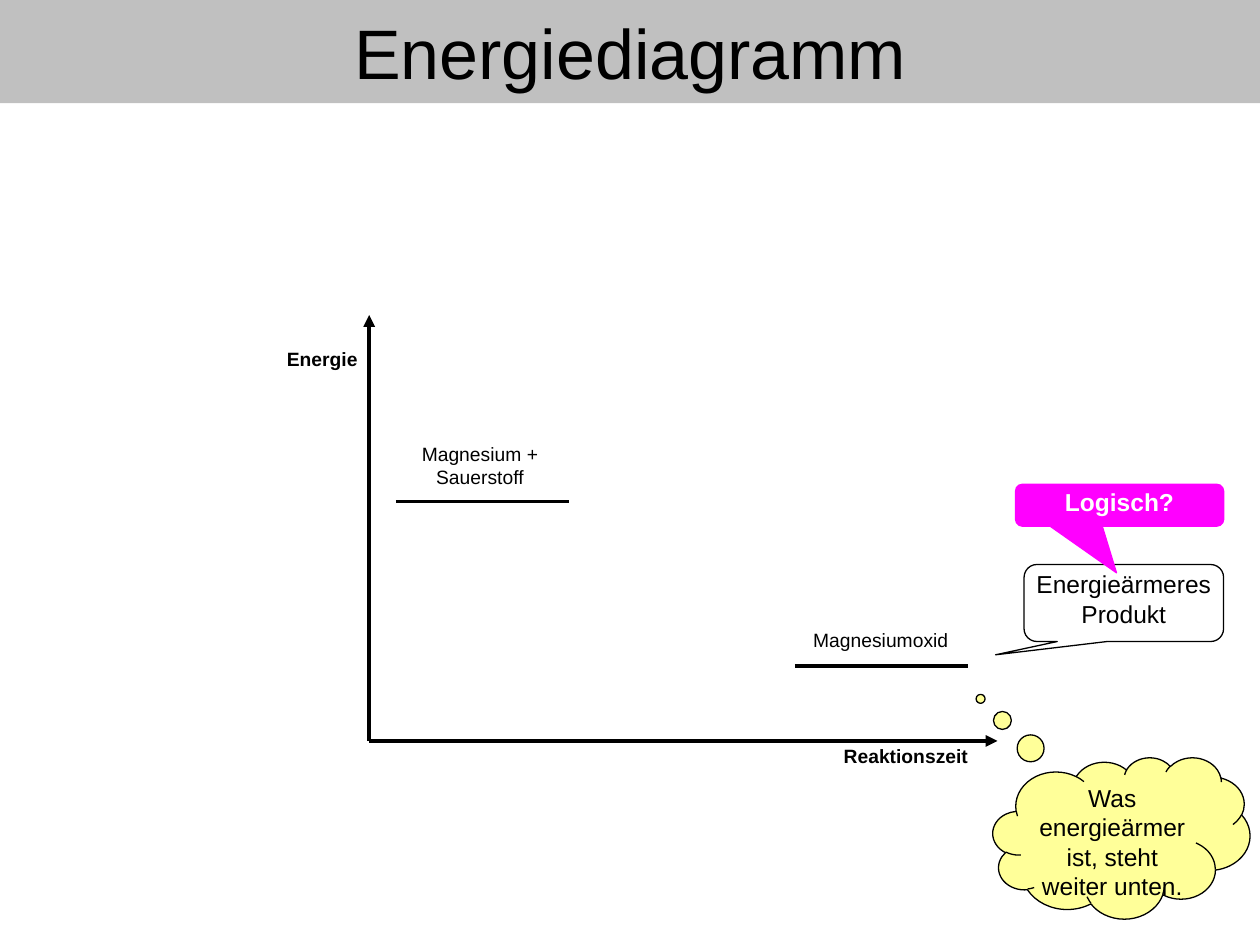
from dataclasses import dataclass

from lxml import etree
from pptx import Presentation
from pptx.dml.color import RGBColor
from pptx.enum import shapes, text
from pptx.oxml import ns
from pptx.util import Pt


@dataclass(frozen=True)
class Theme:
    font: str = "Arial"
    ink: str = "000000"
    paper: str = "FFFFFF"
    banner: str = "C0C0C0"
    thought: str = "FFFF99"
    question: str = "FF00FF"
    title_size: float = 40
    callout_size: float = 14
    label_size: float = 11
    heavy: float = 2.25
    thin: float = 0.75


class Diagram:
    def __init__(self, page, theme):
        self.page = page
        self.theme = theme

    def set_words(self, frame, words, size, color, bold=False, align=text.PP_ALIGN.CENTER):
        frame.text = words
        frame.word_wrap = True
        for para in frame.paragraphs:
            para.alignment = align
            for span in para.runs:
                span.font.name = self.theme.font
                span.font.size = Pt(size)
                span.font.bold = bold
                span.font.color.rgb = RGBColor.from_string(color)

    def paint(self, box, color):
        box.fill.solid()
        box.fill.fore_color.rgb = RGBColor.from_string(color)

    def title(self, words, width, height):
        box = self.page.shapes.title
        box.left, box.top, box.width, box.height = 0, 0, Pt(width), Pt(height)
        self.paint(box, self.theme.banner)
        self.set_words(box.text_frame, words, self.theme.title_size, self.theme.ink)
        box.text_frame.auto_size = text.MSO_AUTO_SIZE.NONE
        box.text_frame.vertical_anchor = text.MSO_ANCHOR.MIDDLE

    def line(self, start, end, arrow=False):
        points = [Pt(value) for value in (*start, *end)]
        rule = self.page.shapes.add_connector(shapes.MSO_CONNECTOR.STRAIGHT, *points)
        rule.line.color.rgb = RGBColor.from_string(self.theme.ink)
        rule.line.width = Pt(self.theme.heavy)
        properties = rule._element.spPr
        if arrow:
            outline = properties.find(ns.qn("a:ln"))
            etree.SubElement(outline, ns.qn("a:tailEnd"), type="triangle")
        etree.SubElement(properties, ns.qn("a:effectLst"))

    def label(self, words, area, bold=False, align=text.PP_ALIGN.CENTER):
        box = self.page.shapes.add_textbox(*map(Pt, area))
        self.set_words(box.text_frame, words, self.theme.label_size, self.theme.ink, bold, align)
        box.text_frame.auto_size = text.MSO_AUTO_SIZE.SHAPE_TO_FIT_TEXT

    def callout(self, kind, words, area, tip, fill, edge, color, bold=False):
        box = self.page.shapes.add_shape(kind, *map(Pt, area))
        box.shadow.inherit = False
        box.adjustments[0], box.adjustments[1] = tip
        self.paint(box, fill)
        box.line.color.rgb = RGBColor.from_string(edge)
        box.line.width = Pt(self.theme.thin)
        frame = box.text_frame
        self.set_words(frame, words, self.theme.callout_size, color, bold)
        frame.vertical_anchor = text.MSO_ANCHOR.TOP
        frame.margin_left = frame.margin_right = Pt(1.4)
        frame.margin_top = frame.margin_bottom = Pt(0.7)


def main():
    theme = Theme()
    deck = Presentation()
    deck.slide_width, deck.slide_height = Pt(720), Pt(540)
    diagram = Diagram(deck.slides.add_slide(deck.slide_layouts[5]), theme)
    diagram.title("Energiediagramm", 720, 59)

    origin = (211, 423.4)
    for end in ((origin[0], 180), (570, origin[1])):
        diagram.line(origin, end, arrow=True)
    left = text.PP_ALIGN.LEFT
    diagram.label("Energie", (156.8, 194.7, 75.6, 20.2), True, left)
    diagram.label("Reaktionszeit", (475, 422, 96, 20.2), True, left)

    level_width = 99
    for x, y in ((226.2, 286.6), (454.2, 380.6)):
        diagram.line((x, y), (x + level_width, y))
    diagram.label("Magnesium +\vSauerstoff", (231.1, 249.1, 86.4, 33.8))
    diagram.label("Magnesiumoxid", (448.6, 355.7, 109.4, 20.2))

    kinds = shapes.MSO_SHAPE
    diagram.callout(kinds.CLOUD_CALLOUT, "Was energieärmer ist, steht weiter unten.",
                    (567.4, 432.7, 146.9, 92.2), (-0.548, -0.862),
                    theme.thought, theme.ink, theme.ink)
    diagram.callout(kinds.ROUNDED_RECTANGULAR_CALLOUT, "Energieärmeres Produkt",
                    (585.2, 322.6, 114, 44), (-0.643, 0.673),
                    theme.paper, theme.ink, theme.ink)
    diagram.callout(kinds.ROUNDED_RECTANGULAR_CALLOUT, "Logisch?",
                    (580.3, 276.7, 119, 24), (-0.015, 1.609),
                    theme.question, theme.question, theme.paper, True)

    deck.save("out.pptx")


if __name__ == "__main__":
    main()
